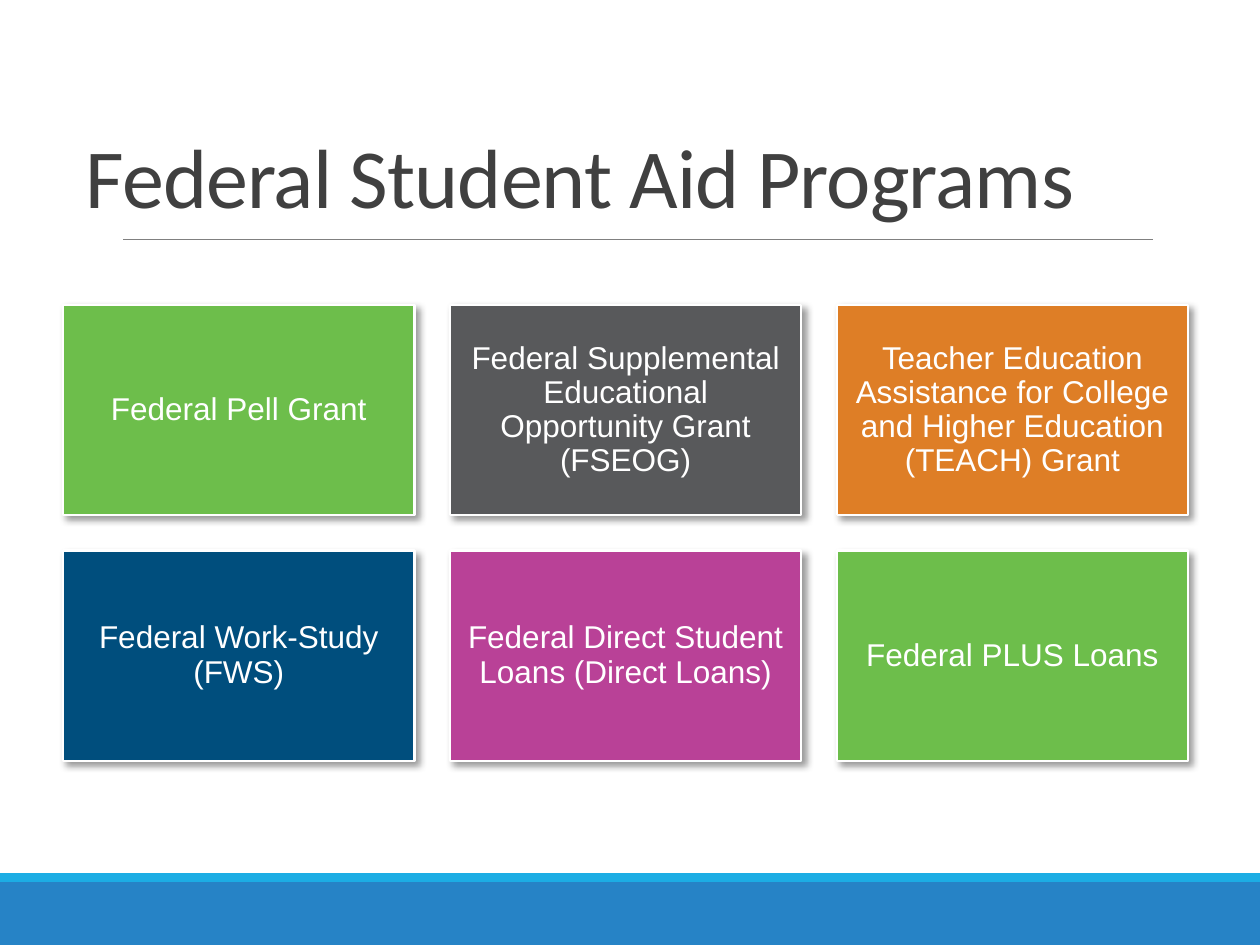
from dataclasses import dataclass

from lxml.etree import SubElement
from pptx import Presentation
from pptx.dml.color import RGBColor
from pptx.enum.shapes import MSO_CONNECTOR, MSO_SHAPE
from pptx.enum.text import MSO_ANCHOR, MSO_AUTO_SIZE, PP_ALIGN
from pptx.oxml import parse_xml
from pptx.oxml.ns import nsdecls, qn
from pptx.util import Inches, Pt


@dataclass(frozen=True)
class Theme:
    """Colours, fonts and type sizes of the slide."""
    heading: str = "404040"
    rule: str = "808080"
    footer: str = "2683C6"
    footer_edge: str = "1CADE4"
    white: str = "FFFFFF"
    green: str = "6DBE4B"
    gray: str = "58595B"
    orange: str = "DE7E26"
    navy: str = "004E7D"
    magenta: str = "B94197"
    heading_font: str = "Calibri"
    tile_font: str = "Arial"
    heading_size: int = 48
    tile_size: int = 18


THEME = Theme()
PROGRAMS = [
    ("Federal Pell Grant", THEME.green),
    ("Federal Supplemental Educational Opportunity Grant (FSEOG)", THEME.gray),
    ("Teacher Education Assistance for College and Higher Education (TEACH) Grant", THEME.orange),
    ("Federal Work-Study (FWS)", THEME.navy),
    ("Federal Direct Student Loans (Direct Loans)", THEME.magenta),
    ("Federal PLUS Loans", THEME.green),
]
COLUMNS = 3
GRID_LEFT, GRID_TOP = 0.5, 2.42
TILE_WIDTH, TILE_HEIGHT = 2.79, 1.67
GAP = 0.28


def style_font(font, name, size, color):
    """Set the typeface, size and colour of a font."""
    font.name = name
    font.size = Pt(size)
    font.color.rgb = RGBColor.from_string(color)


def add_block(page, left, top, width, height, color):
    """Add a plain filled rectangle and return it."""
    block = page.shapes.add_shape(
        MSO_SHAPE.RECTANGLE, Inches(left), Inches(top), Inches(width), Inches(height))
    block.shadow.inherit = False
    block.fill.solid()
    block.fill.fore_color.rgb = RGBColor.from_string(color)
    block.line.fill.background()
    return block


def add_rule(page, left, right, top):
    """Add the thin horizontal line under the title."""
    rule = page.shapes.add_connector(
        MSO_CONNECTOR.STRAIGHT, Inches(left), Inches(top), Inches(right), Inches(top))
    rule.line.color.rgb = RGBColor.from_string(THEME.rule)
    rule.line.width = Pt(0.5)
    SubElement(rule._element.spPr, qn("a:effectLst"))


def set_title(page, text):
    """Fill, place and format the title placeholder."""
    title = page.shapes.title
    title.left, title.top = Inches(0.58), Inches(0.67)
    title.width, title.height = Inches(9), Inches(1.17)
    frame = title.text_frame
    frame.text = text
    frame.word_wrap = True
    frame.auto_size = MSO_AUTO_SIZE.NONE
    frame.vertical_anchor = MSO_ANCHOR.BOTTOM
    para = frame.paragraphs[0]
    para.alignment = PP_ALIGN.LEFT
    para.line_spacing = 0.85
    style_font(para.font, THEME.heading_font, THEME.heading_size, THEME.heading)
    para.runs[0].font._element.set("spc", "-50")


def add_shadow(shape):
    """Give a shape a soft shadow to the lower right."""
    properties = shape._element.spPr
    properties.remove(properties.find(qn("a:effectLst")))
    properties.append(parse_xml(
        f'<a:effectLst {nsdecls("a")}>'
        f'<a:outerShdw blurRad="{Pt(4)}" dist="{Pt(3)}" dir="2700000" rotWithShape="0">'
        '<a:srgbClr val="000000"><a:alpha val="40000"/></a:srgbClr>'
        '</a:outerShdw></a:effectLst>'))


def add_tile(page, left, top, text, color):
    """Add one program tile with centred text."""
    tile = add_block(page, left, top, TILE_WIDTH, TILE_HEIGHT, color)
    tile.line.color.rgb = RGBColor.from_string(THEME.white)
    tile.line.width = Pt(1.25)
    add_shadow(tile)
    frame = tile.text_frame
    frame.text = text
    frame.word_wrap = True
    frame.vertical_anchor = MSO_ANCHOR.MIDDLE
    frame.margin_left = frame.margin_right = Inches(0.07)
    frame.margin_top = frame.margin_bottom = Inches(0.07)
    para = frame.paragraphs[0]
    para.alignment = PP_ALIGN.CENTER
    para.line_spacing = 0.9
    style_font(para.font, THEME.tile_font, THEME.tile_size, THEME.white)


def add_tile_grid(page):
    """Lay the program tiles out in equal rows and columns."""
    for index, (text, color) in enumerate(PROGRAMS):
        row, column = divmod(index, COLUMNS)
        left = GRID_LEFT + column * (TILE_WIDTH + GAP)
        top = GRID_TOP + row * (TILE_HEIGHT + GAP)
        add_tile(page, left, top, text, color)


def main():
    """Build the slide and save the deck."""
    deck = Presentation()
    deck.slide_width, deck.slide_height = Inches(10), Inches(7.5)
    page = deck.slides.add_slide(deck.slide_layouts[5])
    add_block(page, 0, 7, 10, 0.5, THEME.footer)
    add_block(page, 0, 6.93, 10, 0.07, THEME.footer_edge)
    add_rule(page, 0.98, 9.15, 1.9)
    set_title(page, "Federal Student Aid Programs")
    add_tile_grid(page)
    deck.save("out.pptx")


if __name__ == "__main__":
    main()
